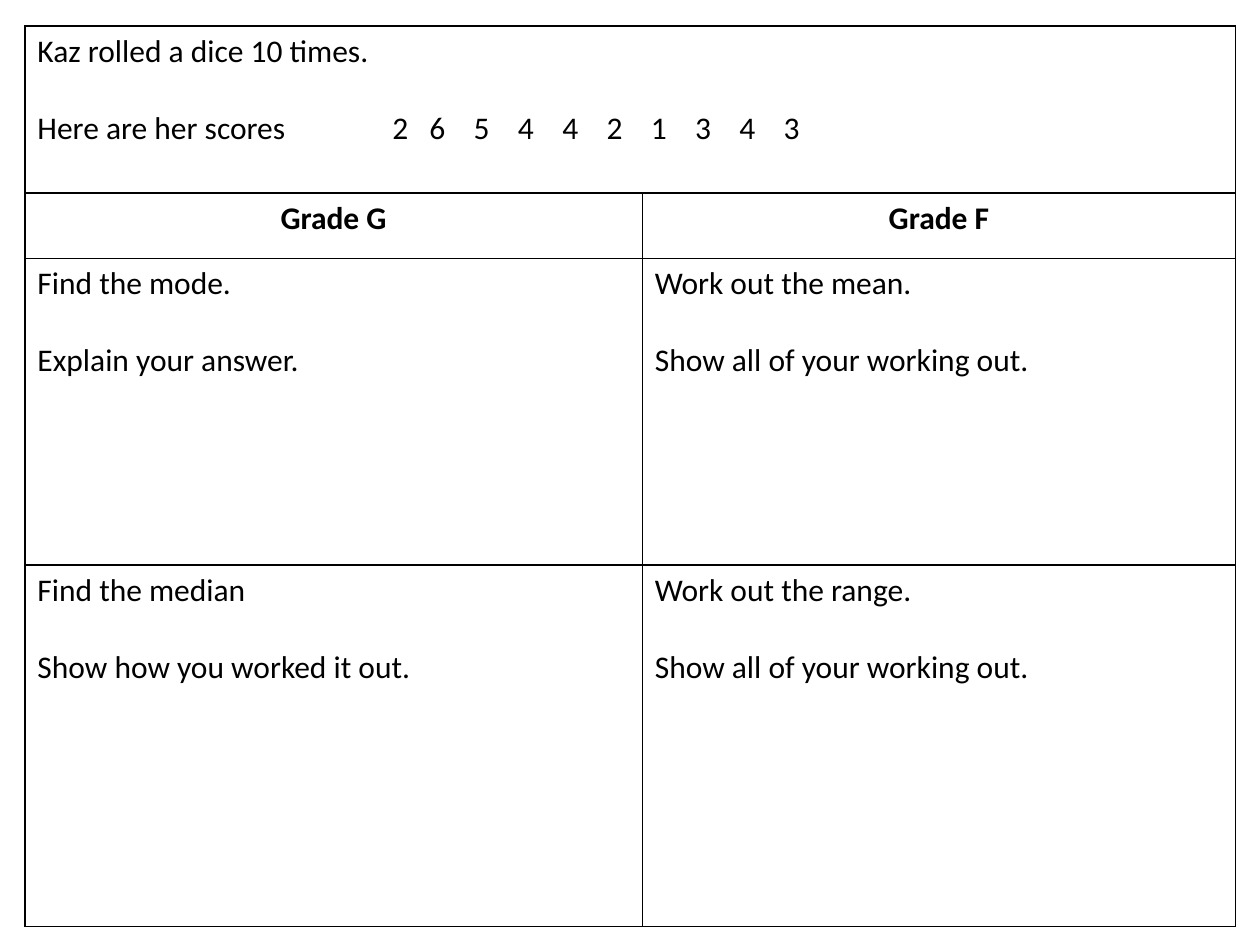
from lxml import etree
from pptx import Presentation
from pptx.dml.color import RGBColor
from pptx.enum import text
from pptx.oxml import ns
from pptx.util import Pt

COLORS = {"ink": "000000", "paper": "FFFFFF"}


class Worksheet:
    """Holds the shared style and the slide being filled."""

    font = "Calibri"
    size = 18
    line_gap = 22
    border = 1

    def __init__(self, slide):
        self.slide = slide

    def grid(self, left, top, columns, rows):
        frame = self.slide.shapes.add_table(
            len(rows), len(columns), Pt(left), Pt(top), Pt(sum(columns)), Pt(sum(rows)))
        table = frame.table
        table.first_row = table.horz_banding = False
        for column, width in zip(table.columns, columns):
            column.width = Pt(width)
        for row, height in zip(table.rows, rows):
            row.height = Pt(height)
        for cell in table.iter_cells():
            self.outline(cell)
        return table

    def outline(self, cell):
        properties = cell._tc.get_or_add_tcPr()
        for side in ("a:lnL", "a:lnR", "a:lnT", "a:lnB"):
            line = etree.SubElement(properties, ns.qn(side), w=str(Pt(self.border)))
            fill = etree.SubElement(line, ns.qn("a:solidFill"))
            etree.SubElement(fill, ns.qn("a:srgbClr"), val=COLORS["ink"])
        cell.fill.solid()
        cell.fill.fore_color.rgb = RGBColor.from_string(COLORS["paper"])

    def fill_cell(self, cell, lines, heading=False):
        cell.text_frame.text = "\n".join(lines)
        for index, paragraph in enumerate(cell.text_frame.paragraphs):
            paragraph.alignment = text.PP_ALIGN.CENTER if heading else text.PP_ALIGN.LEFT
            if index:
                paragraph.space_before = Pt(self.line_gap)
            for run in paragraph.runs:
                run.font.name = self.font
                run.font.size = Pt(self.size)
                run.font.bold = heading
                run.font.color.rgb = RGBColor.from_string(COLORS["ink"])

    def tab_stops(self, paragraph, positions):
        stops = etree.SubElement(paragraph._p.get_or_add_pPr(), ns.qn("a:tabLst"))
        for position in positions:
            etree.SubElement(stops, ns.qn("a:tab"), pos=str(Pt(position)), algn="l")


def main():
    deck = Presentation()
    deck.slide_width, deck.slide_height = Pt(720), Pt(540)
    sheet = Worksheet(deck.slides.add_slide(deck.slide_layouts[6]))
    table = sheet.grid(14.2, 15, columns=[352.8, 339.1], rows=[95.2, 37.4, 175.4, 206.4])

    # Question and scores across the full width
    question = table.cell(0, 0)
    question.merge(table.cell(0, 1))
    scores = [2, 6, 5, 4, 4, 2, 1, 3, 4, 3]
    score_line = "\t".join(["Here are her scores", *map(str, scores)])
    sheet.fill_cell(question, ["Kaz rolled a dice 10 times.", score_line])
    first_stop, second_stop, step = 202.8, 224, 25.3
    stops = [first_stop] + [second_stop + step * i for i in range(len(scores) - 1)]
    sheet.tab_stops(question.text_frame.paragraphs[1], stops)

    # Grade headings
    for column, grade in enumerate(["Grade G", "Grade F"]):
        sheet.fill_cell(table.cell(1, column), [grade], heading=True)

    # Tasks for each grade
    tasks = [
        [["Find the mode.", "Explain your answer."],
         ["Work out the mean.", "Show all of your working out."]],
        [["Find the median", "Show how you worked it out."],
         ["Work out the range.", "Show all of your working out."]],
    ]
    for row, pair in enumerate(tasks, start=2):
        for column, task in enumerate(pair):
            sheet.fill_cell(table.cell(row, column), task)

    deck.save("out.pptx")


if __name__ == "__main__":
    main()
